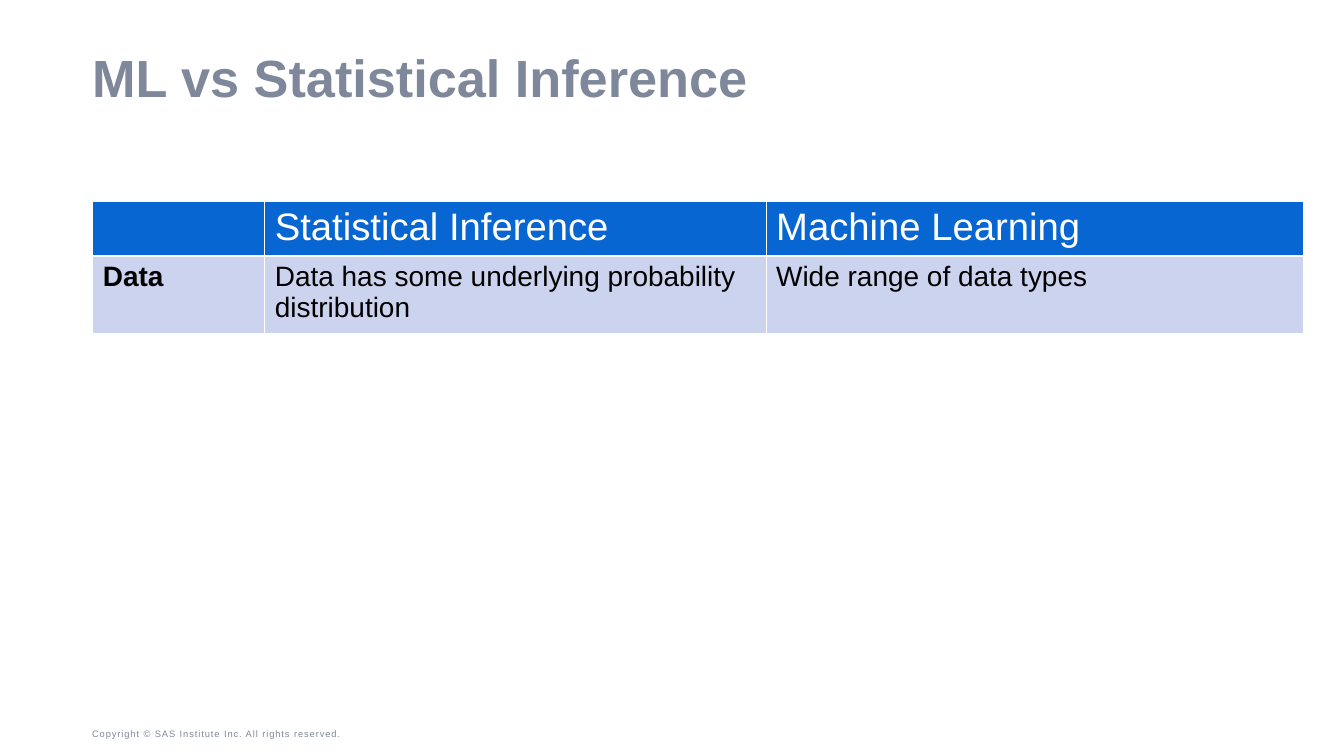
import pptx
import pptx.util
import pptx.dml.color
import pptx.enum.text
from lxml import etree

TITLE = "ML vs Statistical Inference"
COPYRIGHT = "Copyright © SAS Institute Inc. All rights reserved."
ROWS = [
    ["", "Statistical Inference", "Machine Learning"],
    ["Data", "Data has some underlying probability distribution", "Wide range of data types"],
]

THEME = {
    "font": "Arial",
    "muted": "7E889A",
    "border": "FFFFFF",
    "title_size": 56,
    "copyright_size": 10,
    "header": {"fill": "0766D1", "color": "FFFFFF", "size": 41, "bottom": 3},
    "body": {"fill": "CCD3EE", "color": "000000", "size": 30, "bottom": 1},
}

PX = 9144
SLIDE = (2000, 1125)
TITLE_BOX = (137, 78, 1725, 85)
COPYRIGHT_BOX = (137, 1078, 550, 27)
TABLE_AT = (138, 299)
COL_WIDTHS = (256, 746, 800)
ROW_HEIGHTS = (82, 115)
CELL_INSETS = (15, 7, 15, 7)


def px(n):
    return pptx.util.Emu(n * PX)


def rgb(value):
    return pptx.dml.color.RGBColor.from_string(value)


def place(shape, box):
    shape.left, shape.top, shape.width, shape.height = map(px, box)


def set_insets(target, insets):
    names = ("margin_left", "margin_top", "margin_right", "margin_bottom")
    for name, inset in zip(names, insets):
        setattr(target, name, px(inset))


def write(tf, text, size, color, bold=False):
    tf.text = text
    p = tf.paragraphs[0]
    p.alignment = pptx.enum.text.PP_ALIGN.LEFT
    for font in [p.font] + [r.font for r in p.runs]:
        font.name = THEME["font"]
        font.size = pptx.util.Pt(size)
        font.bold = bold
        font.color.rgb = rgb(color)
    return p


def set_borders(cell, bottom):
    ns = pptx.oxml.ns.qn
    tc_pr = cell._tc.get_or_add_tcPr()
    for side, width in (("L", 1), ("R", 1), ("T", 1), ("B", bottom)):
        ln = etree.SubElement(tc_pr, ns(f"a:ln{side}"), w=str(pptx.util.Pt(width)))
        fill = etree.SubElement(ln, ns("a:solidFill"))
        etree.SubElement(fill, ns("a:srgbClr"), val=THEME["border"])


def add_title(s):
    title = s.shapes.title
    place(title, TITLE_BOX)
    tf = title.text_frame
    set_insets(tf, (0, 0, 0, 0))
    tf.word_wrap = True
    tf.auto_size = pptx.enum.text.MSO_AUTO_SIZE.NONE
    tf.vertical_anchor = pptx.enum.text.MSO_ANCHOR.MIDDLE
    p = write(tf, TITLE, THEME["title_size"], THEME["muted"], True)
    p.line_spacing = 0.9


def add_copyright(s):
    tf = s.shapes.add_textbox(*map(px, COPYRIGHT_BOX)).text_frame
    set_insets(tf, (0, 5, 10, 5))
    tf.word_wrap = True
    tf.auto_size = pptx.enum.text.MSO_AUTO_SIZE.SHAPE_TO_FIT_TEXT
    tf.vertical_anchor = pptx.enum.text.MSO_ANCHOR.BOTTOM
    p = write(tf, COPYRIGHT, THEME["copyright_size"], THEME["muted"])
    p.runs[0].font._element.set("spc", "100")


def add_comparison(s):
    size = (sum(COL_WIDTHS), sum(ROW_HEIGHTS))
    table = s.shapes.add_table(len(ROWS), len(COL_WIDTHS), *map(px, TABLE_AT + size)).table
    for column, width in zip(table.columns, COL_WIDTHS):
        column.width = px(width)
    for i, (row, texts) in enumerate(zip(table.rows, ROWS)):
        row.height = px(ROW_HEIGHTS[i])
        style = THEME["body" if i else "header"]
        for j, (cell, text) in enumerate(zip(row.cells, texts)):
            set_insets(cell, CELL_INSETS)
            set_borders(cell, style["bottom"])
            cell.fill.solid()
            cell.fill.fore_color.rgb = rgb(style["fill"])
            write(cell.text_frame, text, style["size"], style["color"], i > 0 and j == 0)


def main():
    prs = pptx.Presentation()
    prs.slide_width, prs.slide_height = map(px, SLIDE)
    s = prs.slides.add_slide(prs.slide_layouts[5])
    add_copyright(s)
    add_title(s)
    add_comparison(s)
    prs.save("out.pptx")


if __name__ == "__main__":
    main()
